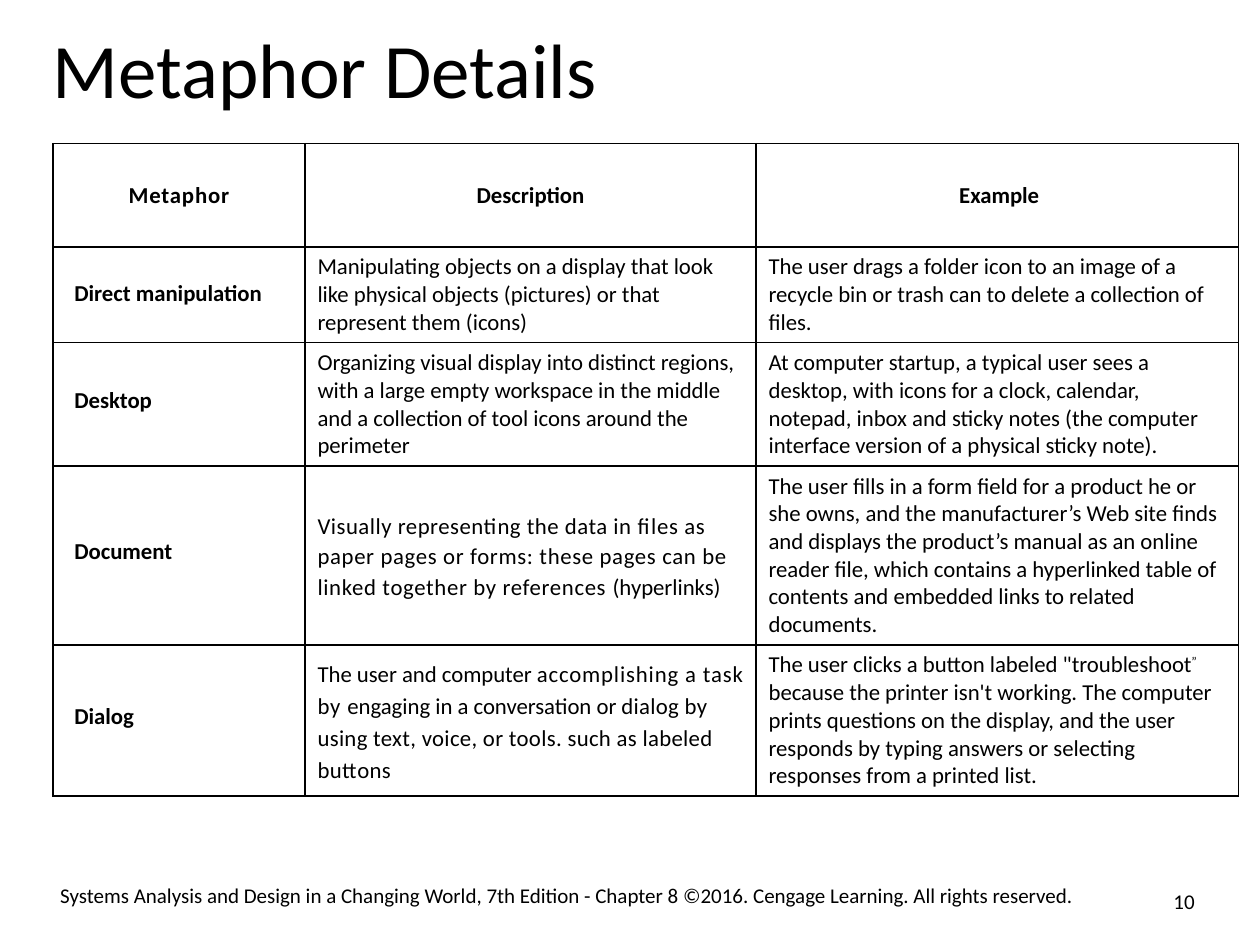
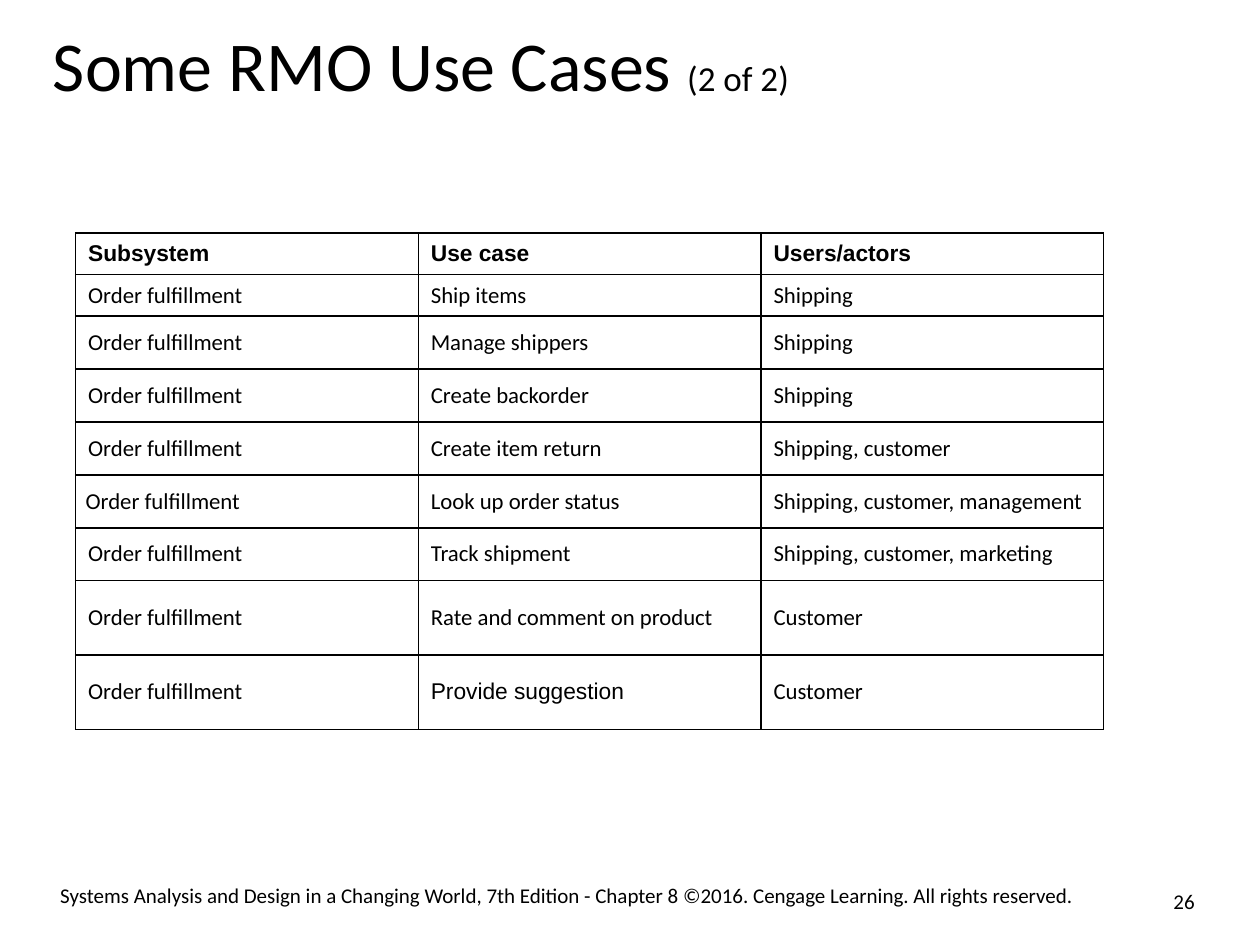
from lxml.etree import SubElement
from pptx import Presentation
from pptx.dml.color import RGBColor
from pptx.enum.text import MSO_ANCHOR, MSO_AUTO_SIZE, PP_ALIGN
from pptx.oxml.ns import qn
from pptx.util import Inches, Pt

BLACK, WHITE = "000000", "FFFFFF"
BODY, HEADING = "Calibri", "Arial"
TITLE_ONLY = 5
FOOTER = ("Systems Analysis and Design in a Changing World, 7th Edition - Chapter 8 "
          "©2016. Cengage Learning. All rights reserved.")


def color(hex_value):
    return RGBColor.from_string(hex_value)


def write(frame, text, size=13, font=BODY, bold=False, align=PP_ALIGN.LEFT,
          line=None, before=None, indent=0, insets=None, anchor=None):
    """Text is a string or a list of (string, overrides) runs."""
    frame.word_wrap = True
    if anchor is not None:
        frame.vertical_anchor = anchor
    if insets:
        (frame.margin_left, frame.margin_top,
         frame.margin_right, frame.margin_bottom) = map(Inches, insets)
    paragraph = frame.paragraphs[0]
    paragraph.alignment = align
    if line is not None:
        paragraph.line_spacing = line
    if before is not None:
        paragraph.space_before = before
    if indent:
        properties = paragraph._p.get_or_add_pPr()
        properties.set("marL", str(Inches(indent)))
        properties.set("indent", "0")
    for words, style in [(text, {})] if isinstance(text, str) else text:
        run = paragraph.add_run()
        run.text = words
        run.font.size = Pt(style.get("size", size))
        run.font.name = font
        run.font.bold = bold
        run.font.color.rgb = color(BLACK)
        for name, scale in (("spc", 100), ("baseline", 1000)):
            if name in style:
                run._r.get_or_add_rPr().set(name, str(round(style[name] * scale)))


class Deck:
    def __init__(self):
        self.presentation = Presentation()
        self.presentation.slide_width = Inches(10)
        self.presentation.slide_height = Inches(7.5)
        self.slide = None

    def start_slide(self, title, number, size):
        layout = self.presentation.slide_layouts[TITLE_ONLY]
        self.slide = self.presentation.slides.add_slide(layout)
        self.slide.background.fill.solid()
        self.slide.background.fill.fore_color.rgb = color(WHITE)
        self.title(title, size)
        self.label(FOOTER, 0.38, 6.98, 8.54, 0.27, line=0.9)
        self.label(number, 9.08, 6.95, 0.5, 0.4, align=PP_ALIGN.RIGHT,
                   anchor=MSO_ANCHOR.MIDDLE)

    def title(self, text, size):
        heading = self.slide.shapes.title
        heading.left, heading.top = Inches(0.42), Inches(0.25)
        heading.width, heading.height = Inches(9.17), Inches(size * 0.0152)
        write(heading.text_frame, text, size=size, line=0.9, before=Pt(0),
              insets=(0, 0, 0, 0), anchor=MSO_ANCHOR.TOP)
        heading.text_frame.auto_size = MSO_AUTO_SIZE.SHAPE_TO_FIT_TEXT

    def label(self, text, left, top, width, height, **style):
        box = self.slide.shapes.add_textbox(*map(Inches, (left, top, width, height)))
        write(box.text_frame, text, size=12, **style)

    def table(self, left, top, widths, heights, rows):
        """Each cell is its text, or a pair of text and format."""
        grid = self.slide.shapes.add_table(
            len(heights), len(widths), Inches(left), Inches(top),
            Inches(sum(widths)), Inches(sum(heights))).table
        grid.first_row = grid.horz_banding = False
        for column, width in zip(grid.columns, widths):
            column.width = Inches(width)
        for row, height, contents in zip(grid.rows, heights, rows):
            row.height = Inches(height)
            for cell, content in zip(row.cells, contents):
                text, style = content if isinstance(content, tuple) else (content, {})
                self.cell(cell, text, **style)

    def cell(self, cell, text, insets=(0.1, 0.05, 0.1, 0.05), **style):
        (cell.margin_left, cell.margin_top,
         cell.margin_right, cell.margin_bottom) = map(Inches, insets)
        cell.vertical_anchor = MSO_ANCHOR.MIDDLE
        write(cell.text_frame, text, **style)
        # Borders come before the fill in the cell properties
        properties = cell._tc.get_or_add_tcPr()
        for side in ("a:lnL", "a:lnR", "a:lnT", "a:lnB"):
            border = SubElement(properties, qn(side), w=str(Pt(1)))
            paint = SubElement(border, qn("a:solidFill"))
            SubElement(paint, qn("a:srgbClr"), val=BLACK)
        cell.fill.solid()
        cell.fill.fore_color.rgb = color(WHITE)


def metaphor_slide(deck):
    deck.start_slide("Metaphor Details", "10", 44)
    header = dict(bold=True, align=PP_ALIGN.CENTER, insets=(0, 0, 0, 0))
    name = dict(bold=True, line=Pt(11.8), insets=(0.17, 0.15, 0.17, 0.15))
    first_name = dict(bold=True, line=0.85, before=Pt(5.4), insets=(0.17, 0, 0.17, 0))
    spaced = dict(indent=0.1, insets=(0, 0, 0, 0))
    document = [
        ("Visually representing the data in ", {"spc": 0.3}),
        ("files as paper pages or forms: these pages can be linked together by "
         "references ", {"spc": 0.4}),
        ("(hyperlinks)", {}),
    ]
    dialog = [
        ("The user and computer ", {}),
        ("accomplishing a task by ", {"spc": 0.5}),
        ("engaging in a conversation or ", {}),
        ("dialog by using text, voice, or tools. such as labeled buttons", {"spc": 0.2}),
    ]
    dialog_example = [
        ('The user clicks a button labeled "troubleshoot', {}),
        ("” ", {"baseline": 30}),
        ("because the printer isn't working. The computer prints questions on the "
         "display, and the user responds by typing answers or selecting responses "
         "from a printed list.", {}),
    ]
    deck.table(0.42, 1.14, (2, 3.58, 3.83), (0.82, 0.76, 0.98, 1.42, 1.2), [
        [([("Metaphor", {"spc": 0.5})], {**header, "insets": (0, 0.3, 0, 0.3)}),
         ("Description", header), ("Example", {**header, "insets": (0.03, 0, 0, 0)})],
        [("Direct manipulation", first_name),
         "Manipulating objects on a display that look like physical objects (pictures) "
         "or that represent them (icons)",
         "The user drags a folder icon to an image of a recycle bin or trash can to "
         "delete a collection of files."],
        [("Desktop", name),
         "Organizing visual display into distinct regions, with a large empty workspace "
         "in the middle and a collection of tool icons around the perimeter",
         "At computer startup, a typical user sees a desktop, with icons for a clock, "
         "calendar, notepad, inbox and sticky notes (the computer interface version of "
         "a physical sticky note)."],
        [("Document", name), (document, {**spaced, "line": 1.11}),
         "The user fills in a form field for a product he or she owns, and the "
         "manufacturer’s Web site finds and displays the product’s manual as an online "
         "reader file, which contains a hyperlinked table of contents and embedded "
         "links to related documents."],
        [("Dialog", name), (dialog, {**spaced, "line": Pt(18.4)}), dialog_example_cell(dialog_example)],
    ])


def dialog_example_cell(runs):
    return runs, {}


def use_case_slide(deck):
    deck.start_slide([("Some RMO Use Cases ", {}), ("(2 of 2)", {"size": 20})], "26", 40)
    use_cases = [
        ("Ship items", "Shipping"),
        ("Manage shippers", "Shipping"),
        ("Create backorder", "Shipping"),
        ("Create item return", "Shipping, customer"),
        ("Look up order status", "Shipping, customer, management"),
        ("Track shipment", "Shipping, customer, marketing"),
        ("Rate and comment on product", "Customer"),
        ("Provide suggestion", "Customer"),
    ]
    header = dict(font=HEADING, bold=True)
    rows = [[(text, header) for text in ("Subsystem", "Use case", "Users/actors")]]
    rows += [["Order fulfillment", *use_case] for use_case in use_cases]
    # Two cells differ from the rest of their column
    rows[5][0] = (rows[5][0], dict(insets=(0.08, 0, 0, 0)))
    rows[8][1] = (rows[8][1], dict(font=HEADING))
    deck.table(0.6, 1.85, [2.72] * 3, [0.33] * 2 + [0.42] * 5 + [0.59] * 2, rows)


def main():
    deck = Deck()
    metaphor_slide(deck)
    use_case_slide(deck)
    deck.presentation.save("out.pptx")


if __name__ == "__main__":
    main()
